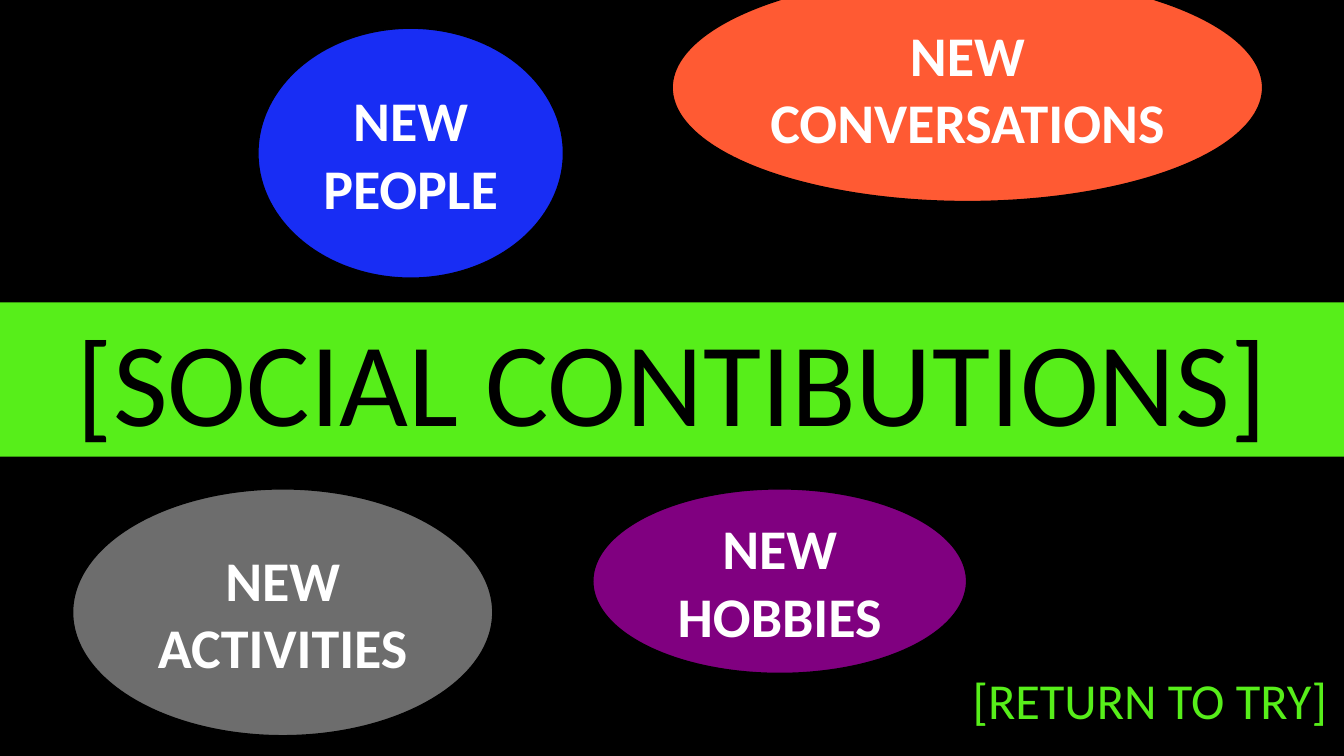
from dataclasses import dataclass

from pptx import Presentation
from pptx.dml.color import RGBColor
from pptx.enum.shapes import MSO_SHAPE as Kind
from pptx.enum.text import MSO_ANCHOR as Anchor, MSO_AUTO_SIZE as Fit, PP_ALIGN as Align
from pptx.shapes.autoshape import Shape
from pptx.slide import Slide
from pptx.util import Cm, Pt

BLACK, WHITE, GREEN = "000000", "FFFFFF", "57EE1A"
WIDTH, HEIGHT = 33.87, 19.05


@dataclass
class Bubble:
    text: str
    left: float
    top: float
    width: float
    height: float
    fill: str


BUBBLES = [
    Bubble("NEW PEOPLE", 6.5, 0.71, 7.7, 6.3, "182DF4"),
    Bubble("NEW CONVERSATIONS", 16.94, -0.66, 14.88, 5.74, "FF5A33"),
    Bubble("NEW HOBBIES", 14.94, 12.32, 9.42, 4.65, "800080"),
    Bubble("NEW ACTIVITIES", 1.83, 12.32, 10.59, 6.22, "6D6D6D"),
]


def color(code: str) -> RGBColor:
    return RGBColor.from_string(code)


def write(shape: Shape, text: str, size: int, ink: str,
          bold: bool = False, anchor: Anchor = Anchor.TOP, fit: Fit = Fit.NONE) -> None:
    frame = shape.text_frame
    for name, value in {"word_wrap": True, "vertical_anchor": anchor, "auto_size": fit}.items():
        setattr(frame, name, value)
    para = frame.paragraphs[0]
    para.alignment = Align.CENTER
    run = para.add_run()
    run.text = text
    for name, value in {"name": "Calibri", "size": Pt(size), "bold": bold}.items():
        setattr(run.font, name, value)
    run.font.color.rgb = color(ink)


def paint(shape: Shape, fill: str) -> None:
    shape.shadow.inherit = False
    shape.fill.solid()
    shape.fill.fore_color.rgb = color(fill)


def draw_band(slide: Slide) -> None:
    band = slide.shapes.add_shape(Kind.RECTANGLE, Cm(0), Cm(7.62), Cm(WIDTH), Cm(3.89))
    paint(band, GREEN)
    band.line.fill.background()
    write(band, "[SOCIAL CONTIBUTIONS]", 85, BLACK, fit=Fit.SHAPE_TO_FIT_TEXT)


def draw_bubble(slide: Slide, item: Bubble) -> None:
    oval = slide.shapes.add_shape(
        Kind.OVAL, Cm(item.left), Cm(item.top), Cm(item.width), Cm(item.height))
    paint(oval, item.fill)
    oval.line.color.rgb = color(BLACK)
    oval.line.width = Pt(1)
    write(oval, item.text, 40, WHITE, bold=True, anchor=Anchor.MIDDLE)


def draw_return(slide: Slide) -> None:
    box = slide.shapes.add_textbox(Cm(24.1), Cm(16.74), Cm(9.76), Cm(1.8))
    write(box, "[RETURN TO TRY]", 36, GREEN, fit=Fit.SHAPE_TO_FIT_TEXT)


def main() -> None:
    # Black slide
    deck = Presentation()
    deck.slide_width, deck.slide_height = Cm(WIDTH), Cm(HEIGHT)
    slide = deck.slides.add_slide(deck.slide_layouts[6])
    back = slide.background.fill
    back.solid()
    back.fore_color.rgb = color(BLACK)

    # Title band, idea bubbles, return label
    draw_band(slide)
    for item in BUBBLES:
        draw_bubble(slide, item)
    draw_return(slide)

    deck.save("out.pptx")


if __name__ == "__main__":
    main()
